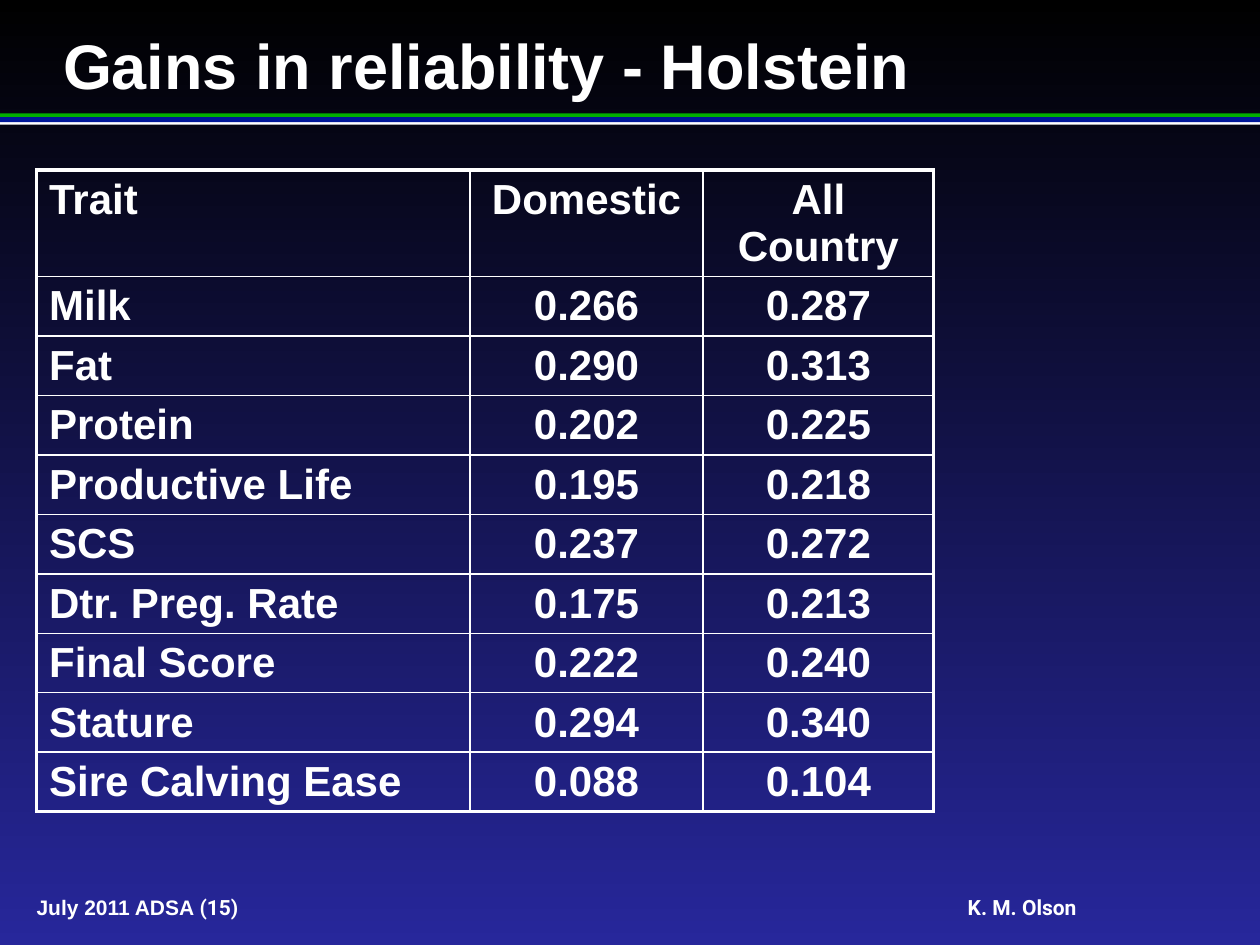
from pptx import Presentation
from pptx import util as u
from pptx.dml.color import RGBColor
from pptx.enum import shapes, text
from pptx.oxml.ns import qn
from lxml import etree

WHITE = RGBColor(0xFF, 0xFF, 0xFF)
BLACK = RGBColor(0x00, 0x00, 0x00)
INDIGO = RGBColor(0x27, 0x27, 0x9B)
GREEN = RGBColor(0x01, 0xAF, 0x00)
BLUE = RGBColor(0x00, 0x17, 0x99)

COLUMN_WIDTHS = (3.44, 1.85, 1.83)
HEADER_HEIGHT, ROW_HEIGHT = 0.84, 0.47
THIN, THICK = 1, 2.25
GAINS = [
    ("Trait", "Domestic", "All Country"),
    ("Milk", "0.266", "0.287"),
    ("Fat", "0.290", "0.313"),
    ("Protein", "0.202", "0.225"),
    ("Productive Life", "0.195", "0.218"),
    ("SCS", "0.237", "0.272"),
    ("Dtr. Preg. Rate", "0.175", "0.213"),
    ("Final Score", "0.222", "0.240"),
    ("Stature", "0.294", "0.340"),
    ("Sire Calving Ease", "0.088", "0.104"),
]


def style_font(font, size, name="Arial"):
    font.name = name
    font.size = u.Pt(size)
    font.bold = True
    font.color.rgb = WHITE


def clear_margins(frame):
    frame.margin_left = frame.margin_right = 0
    frame.margin_top = frame.margin_bottom = 0


def set_background(slide):
    fill = slide.background.fill
    fill.gradient()
    fill.gradient_angle = 270
    for stop, color, position in zip(fill.gradient_stops, (BLACK, INDIGO), (0, 1)):
        stop.color.rgb = color
        stop.position = position


def add_stripe(slide, top, height, color):
    stripe = slide.shapes.add_shape(
        shapes.MSO_SHAPE.RECTANGLE, 0, u.Inches(top), u.Inches(10), u.Inches(height))
    stripe.shadow.inherit = False
    stripe.fill.solid()
    stripe.fill.fore_color.rgb = color
    stripe.line.fill.background()


def set_title(slide, wording):
    title = slide.shapes.title
    title.left, title.top = u.Inches(0.5), u.Inches(0.21)
    title.width, title.height = u.Inches(9), u.Inches(0.6)
    frame = title.text_frame
    clear_margins(frame)
    frame.vertical_anchor = text.MSO_ANCHOR.BOTTOM
    frame.text = wording
    paragraph = frame.paragraphs[0]
    paragraph.alignment = text.PP_ALIGN.LEFT
    style_font(paragraph.font, 36)


def set_borders(cell, widths):
    properties = cell._tc.get_or_add_tcPr()
    # Border lines must come before the fill
    for index, (side, width) in enumerate(widths.items()):
        line = etree.Element(qn(f"a:{side}"), w=str(u.Pt(width)))
        fill = etree.SubElement(line, qn("a:solidFill"))
        etree.SubElement(fill, qn("a:srgbClr"), val=str(WHITE))
        properties.insert(index, line)


def add_gains_table(slide, rows):
    last_row, last_column = len(rows) - 1, len(COLUMN_WIDTHS) - 1
    height = HEADER_HEIGHT + last_row * ROW_HEIGHT
    table = slide.shapes.add_table(
        len(rows), len(COLUMN_WIDTHS), u.Inches(0.29), u.Inches(1.35),
        u.Inches(sum(COLUMN_WIDTHS)), u.Inches(height)).table
    table.first_row = table.horz_banding = False
    for column, width in zip(table.columns, COLUMN_WIDTHS):
        column.width = u.Inches(width)
    for r, values in enumerate(rows):
        table.rows[r].height = u.Inches(ROW_HEIGHT if r else HEADER_HEIGHT)
        for c, value in enumerate(values):
            cell = table.cell(r, c)
            cell.fill.background()
            cell.text = value
            paragraph = cell.text_frame.paragraphs[0]
            paragraph.alignment = text.PP_ALIGN.CENTER if c else text.PP_ALIGN.LEFT
            style_font(paragraph.font, 24)
            set_borders(cell, {
                "lnL": THIN if c else THICK,
                "lnR": THICK if c == last_column else THIN,
                "lnT": THIN if r else THICK,
                "lnB": THICK if r == last_row else THIN,
            })


def add_footer(slide, event, number, author):
    box = slide.shapes.add_textbox(
        u.Inches(0.29), u.Inches(7.1), u.Inches(9.45), u.Inches(0.2))
    frame = box.text_frame
    frame.word_wrap = True
    frame.vertical_anchor = text.MSO_ANCHOR.MIDDLE
    clear_margins(frame)
    paragraph = frame.paragraphs[0]
    for wording, font_name in ((f"{event} ", "Arial"), (f"{number}\t{author}", "Roboto")):
        run = paragraph.add_run()
        run.text = wording
        style_font(run.font, 12, font_name)
    # Tab stop that places the author's name
    tabs = etree.SubElement(paragraph._p.get_or_add_pPr(), qn("a:tabLst"))
    etree.SubElement(tabs, qn("a:tab"), pos=str(u.Inches(7.39)), algn="l")


def main():
    presentation = Presentation()
    presentation.slide_width = u.Inches(10)
    presentation.slide_height = u.Inches(7.5)
    slide = presentation.slides.add_slide(presentation.slide_layouts[5])
    set_background(slide)

    # Header: three stripes under the title
    add_stripe(slide, 0.9, 0.03, GREEN)
    add_stripe(slide, 0.96, 0.03, WHITE)
    add_stripe(slide, 0.93, 0.04, BLUE)
    set_title(slide, "Gains in reliability - Holstein")

    # Body and footer
    add_gains_table(slide, GAINS)
    add_footer(slide, "July 2011 ADSA", "(15)", "K. M. Olson")
    presentation.save("out.pptx")


if __name__ == "__main__":
    main()
